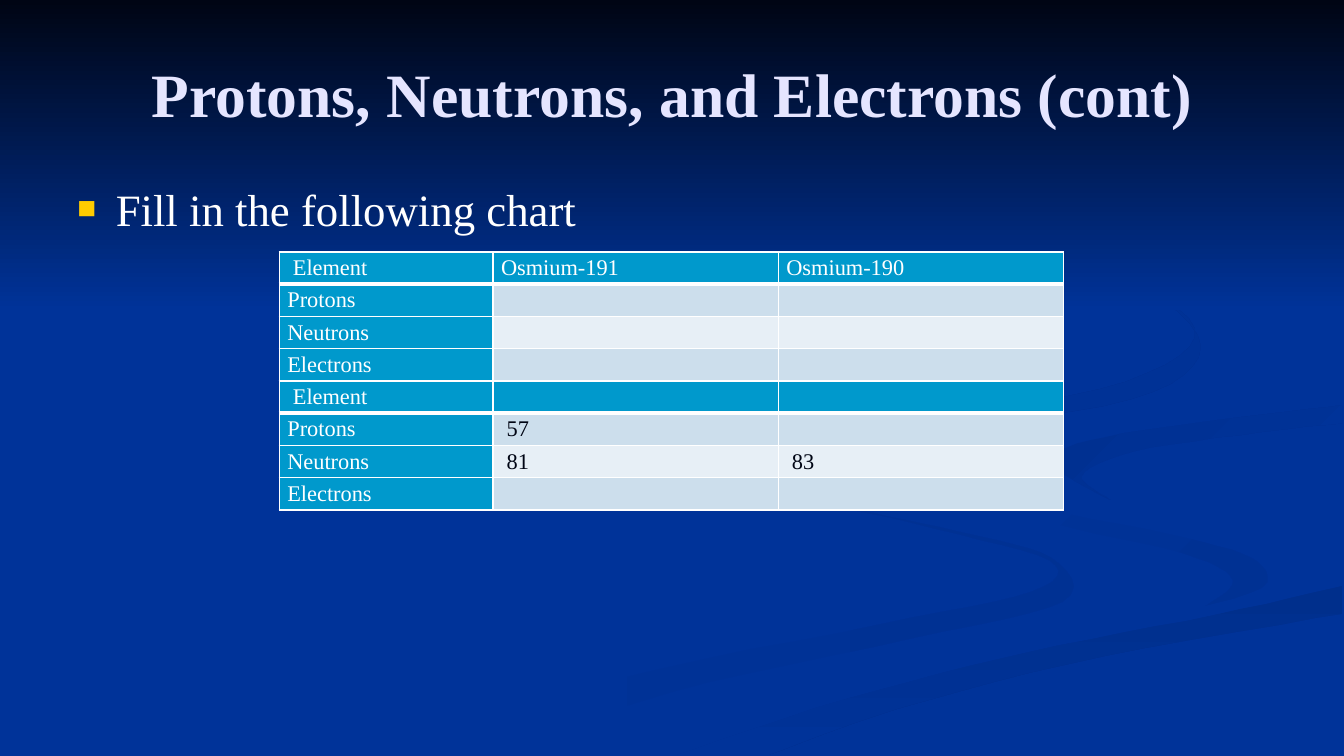
import pptx
import pptx.util
import pptx.dml.color
import pptx.enum.shapes
import pptx.enum.text
import pptx.oxml
import pptx.oxml.ns

Inches, Pt = pptx.util.Inches, pptx.util.Pt

FONT = "Times New Roman"
NAVY, BLUE, CYAN, WHITE = "000514", "003399", "0099CC", "FFFFFF"
BANDS = ["E7EFF6", "CCDEEC"]
TITLE = "Protons, Neutrons, and Electrons (cont)"
PROMPT = "Fill in the following chart"
TABLES = [
    [[" Element", "Osmium-191", "Osmium-190"],
     ["Protons", "", ""],
     ["Neutrons", "", ""],
     ["Electrons", "", ""]],
    [[" Element", "", ""],
     ["Protons", " 57", ""],
     ["Neutrons", " 81", " 83"],
     ["Electrons", "", ""]],
]
COLS, ROW_H = [2.12, 2.83, 2.83], 0.32
TABLE_LEFT, TABLE_TOP = 2.77, 2.5

RIBBONS = [
    (BLUE, "003193", 0,
     [(7.67, 4.59), (8.18, 4.96), (9.53, 5.28), (10.42, 5.53), (10.54, 5.97),
      (9.01, 6.34), (6.65, 6.87), (4.82, 7.49)],
     [(4, 7.49), (6.11, 6.74), (8.7, 6.2), (10.23, 5.87), (10.41, 5.56),
      (9.29, 5.25), (7.91, 4.91), (7.6, 4.68)]),
    (BLUE, "003193", 45,
     [(9.65, 4.64), (10.1, 4.98), (11.6, 5.3), (12.4, 5.53), (12.54, 5.81), (11.91, 6.05)],
     [(11.91, 6.05), (12.23, 5.76), (11.74, 5.49), (10.41, 5.18), (9.73, 4.84)]),
    ("002F8C", BLUE, 90,
     [(6.71, 7.49), (8.4, 6.93), (10.19, 6.47), (12.04, 6.1), (13.31, 5.81)],
     [(13.31, 6.09), (10.95, 6.51), (8.94, 7.02), (7.62, 7.49)]),
    (BLUE, BLUE, 0,
     [(9.66, 4.64), (10.12, 4.98), (11.61, 5.3), (12.42, 5.53), (12.53, 5.83),
      (11.24, 6.18), (8.84, 6.68), (6.36, 7.49)],
     [(6.71, 7.49), (8.4, 6.93), (10.19, 6.47), (12.04, 6.1), (13.32, 5.81)],
     [(13.32, 5.38), (11.55, 5.09), (10.42, 4.63), (11.34, 4.27), (13.32, 4.02)],
     [(13.32, 3.87), (11.35, 4.11), (10.07, 4.32), (9.66, 4.64)]),
    ("003091", BLUE, 45,
     [(13.31, 4.02), (11.98, 4.18), (10.8, 4.37), (10.42, 4.6), (11.01, 4.96)],
     [(11.01, 4.96), (10.73, 4.72), (11.24, 4.48), (12.48, 4.29), (13.31, 4.2)]),
    ("002F8E", BLUE, 45,
     [(10.17, 2.33), (11.24, 2.75), (11.91, 3.44), (11.22, 3.96), (9.11, 4.3),
      (8.08, 4.52), (8.29, 5)],
     [(8.29, 5), (7.69, 4.62), (8.65, 4.2), (10.91, 3.86), (11.85, 3.35),
      (11.27, 2.79), (10.17, 2.33)]),
]


def rgb(color):
    return pptx.dml.color.RGBColor.from_string(color)


def apply(target, values):
    for name, value in values.items():
        setattr(target, name, value)


def smooth(edge, steps=6):
    padded = [edge[0]] + edge + [edge[-1]]
    points = []
    for a, b, c, d in zip(padded, padded[1:], padded[2:], padded[3:]):
        for t in (k / steps for k in range(steps)):
            points.append(tuple(
                q + t * ((r - p) + t * ((2 * p - 5 * q + 4 * r - u)
                                        + t * (3 * q - p - 3 * r + u))) / 2
                for p, q, r, u in zip(a, b, c, d)))
    return points + [edge[-1]]


def paint(sp, start, end, angle):
    sp.shadow.inherit = False
    sp.line.fill.background()
    if start == end:
        sp.fill.solid()
        sp.fill.fore_color.rgb = rgb(start)
        return
    sp.fill.gradient()
    sp.fill.gradient_angle = (360 - angle) % 360
    for stop, color in zip(sp.fill.gradient_stops, (start, end)):
        stop.color.rgb = rgb(color)


def add_ribbon(s, start, end, angle, *edges):
    points = [(x * 100, y * 100) for edge in edges for x, y in smooth(edge)]
    fb = s.shapes.build_freeform(*points[0], scale=Inches(0.01))
    fb.add_line_segments(points[1:], close=True)
    paint(fb.convert_to_shape(), start, end, angle)


def write(p, text, size, color, bold=False):
    r = p.add_run()
    r.text = text
    apply(r.font, {"name": FONT, "size": Pt(size), "bold": bold})
    r.font.color.rgb = rgb(color)


def add_text(s, box, text, size, color, anchor, bold=False):
    tf = s.shapes.add_textbox(*map(Inches, box)).text_frame
    apply(tf, {"word_wrap": True, "vertical_anchor": anchor})
    p = tf.paragraphs[0]
    write(p, text, size, color, bold)
    return p


def add_bullet(p):
    pPr = p._p.get_or_add_pPr()
    for name, value in {"marL": Inches(0.38), "indent": -Inches(0.38)}.items():
        pPr.set(name, str(int(value)))
    ns = pptx.oxml.ns.nsdecls("a")
    for xml in (f'<a:buClr {ns}><a:srgbClr val="FFCC00"/></a:buClr>',
                f'<a:buSzPct {ns} val="70000"/>',
                f'<a:buFont {ns} typeface="{FONT}"/>',
                f'<a:buChar {ns} char="■"/>'):
        pPr.append(pptx.oxml.parse_xml(xml))


def add_borders(cell, header):
    ns = pptx.oxml.ns.nsdecls("a")
    for side in "LRTB":
        width = Pt(3 if header and side == "B" else 1)
        cell._tc.get_or_add_tcPr().append(pptx.oxml.parse_xml(
            f'<a:ln{side} {ns} w="{int(width)}"><a:solidFill>'
            f'<a:srgbClr val="{WHITE}"/></a:solidFill></a:ln{side}>'))


def add_element_table(s, top, rows):
    box = (TABLE_LEFT, top, sum(COLS), ROW_H * len(rows))
    table = s.shapes.add_table(len(rows), len(COLS), *map(Inches, box)).table
    for col, width in zip(table.columns, COLS):
        col.width = Inches(width)
    for i, row in enumerate(rows):
        table.rows[i].height = Inches(ROW_H)
        for j, text in enumerate(row):
            cell = table.cell(i, j)
            heading = i == 0 or j == 0
            apply(cell, {"margin_left": Inches(0.08), "margin_right": Inches(0.08),
                         "margin_top": 0, "margin_bottom": 0})
            add_borders(cell, i == 0)
            cell.fill.solid()
            cell.fill.fore_color.rgb = rgb(CYAN if heading else BANDS[i % 2])
            if text:
                p = cell.text_frame.paragraphs[0]
                p.line_spacing = 1.15
                write(p, text, 16, WHITE if heading else NAVY)


def main():
    prs = pptx.Presentation()
    apply(prs, {"slide_width": Inches(13.33), "slide_height": Inches(7.5)})
    s = prs.slides.add_slide(prs.slide_layouts[6])
    s.background.fill.solid()
    s.background.fill.fore_color.rgb = rgb(BLUE)
    for ribbon in RIBBONS:
        add_ribbon(s, *ribbon)
    sky = s.shapes.add_shape(pptx.enum.shapes.MSO_SHAPE.RECTANGLE, 0, 0,
                             prs.slide_width, Inches(3.08))
    paint(sky, NAVY, BLUE, 90)
    anchors = pptx.enum.text.MSO_ANCHOR
    p = add_text(s, (0.67, 0.3, 12, 1.25), TITLE, 44, "E5E5FF", anchors.MIDDLE, True)
    p.alignment = pptx.enum.text.PP_ALIGN.CENTER
    p = add_text(s, (0.67, 1.75, 12, 4.95), PROMPT, 32, WHITE, anchors.TOP)
    p.space_before = Pt(6.4)
    add_bullet(p)
    for i, rows in enumerate(TABLES):
        add_element_table(s, TABLE_TOP + i * ROW_H * len(rows), rows)
    prs.save("out.pptx")


if __name__ == "__main__":
    main()
